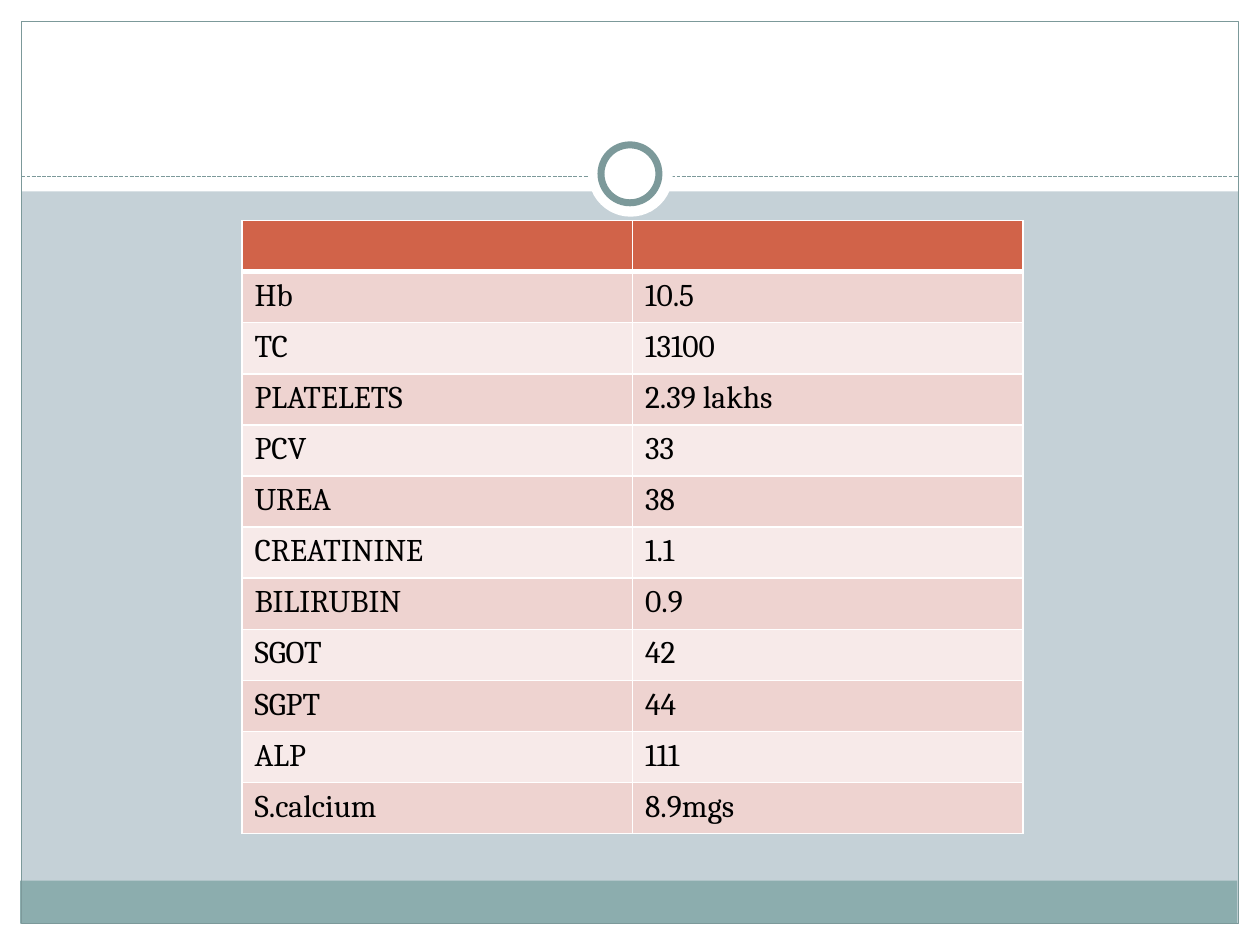
"""Build a slide that tabulates blood test results."""
from dataclasses import dataclass

from lxml.etree import SubElement
from pptx import Presentation
from pptx.dml.color import RGBColor
from pptx.enum.dml import MSO_LINE
from pptx.enum.shapes import MSO_CONNECTOR, MSO_SHAPE
from pptx.oxml.ns import qn
from pptx.util import Inches, Pt


@dataclass(frozen=True)
class Theme:
    """Colours, type and line widths of the slide."""
    background: str = "C5D1D7"
    white: str = "FFFFFF"
    footer: str = "8CADAE"
    outline: str = "7C999A"
    header: str = "D16349"
    bands: tuple = ("EED3D0", "F7EAE9")
    text: str = "000000"
    font: str = "Cambria"
    text_size: float = 18
    thin: float = 0.75
    ring: float = 4
    grid: float = 1
    header_rule: float = 3


THEME = Theme()
RESULTS = [
    ("Hb", "10.5"),
    ("TC", "13100"),
    ("PLATELETS", "2.39 lakhs"),
    ("PCV", "33"),
    ("UREA", "38"),
    ("CREATININE", "1.1"),
    ("BILIRUBIN", "0.9"),
    ("SGOT", "42"),
    ("SGPT", "44"),
    ("ALP", "111"),
    ("S.calcium", "8.9mgs"),
]


def rgb(value):
    """Return a colour from its hex value."""
    return RGBColor.from_string(value)


def add_panel(slide, box, fill=None, line_width=None, kind=MSO_SHAPE.RECTANGLE):
    """Add a flat shape with an optional fill and outline."""
    panel = slide.shapes.add_shape(kind, *map(Inches, box))
    panel.shadow.inherit = False
    if fill:
        panel.fill.solid()
        panel.fill.fore_color.rgb = rgb(fill)
    else:
        panel.fill.background()
    if line_width:
        panel.line.color.rgb = rgb(THEME.outline)
        panel.line.width = Pt(line_width)
    else:
        panel.line.fill.background()


def add_dashed_rule(slide, left, right, y):
    """Add the horizontal dashed rule of the title area."""
    rule = slide.shapes.add_connector(
        MSO_CONNECTOR.STRAIGHT, Inches(left), Inches(y), Inches(right), Inches(y))
    rule.line.color.rgb = rgb(THEME.outline)
    rule.line.width = Pt(THEME.thin)
    rule.line.dash_style = MSO_LINE.SQUARE_DOT
    SubElement(rule._element.spPr, qn("a:effectLst"))


def add_frame(slide):
    """Add the white margins, footer band, outline and title ring."""
    for box in [(0, 7.33, 10, 0.17), (0, 0, 10, 1.52),
                (0, 0, 0.17, 7.5), (9.83, 0, 0.17, 7.5)]:
        add_panel(slide, box, THEME.white)
    add_panel(slide, (0.16, 6.99, 9.66, 0.34), THEME.footer)
    add_panel(slide, (0.17, 0.17, 9.66, 7.16), line_width=THEME.thin)
    add_dashed_rule(slide, 0.17, 9.83, 1.4)
    add_panel(slide, (4.67, 1.05, 0.67, 0.67), THEME.white, kind=MSO_SHAPE.OVAL)
    add_panel(slide, (4.77, 1.15, 0.46, 0.46), THEME.white, THEME.ring, MSO_SHAPE.OVAL)


def set_borders(cell, top, bottom):
    """Draw white cell borders with the given top and bottom widths."""
    widths = {"a:lnL": THEME.grid, "a:lnR": THEME.grid, "a:lnT": top, "a:lnB": bottom}
    properties = cell._tc.get_or_add_tcPr()
    for tag, width in widths.items():
        border = SubElement(properties, qn(tag), w=str(Pt(width)))
        fill = SubElement(border, qn("a:solidFill"))
        SubElement(fill, qn("a:srgbClr"), val=THEME.white)


def format_cell(cell, fill, top=THEME.grid, bottom=THEME.grid):
    """Set the borders and fill of a cell."""
    set_borders(cell, top, bottom)
    cell.fill.solid()
    cell.fill.fore_color.rgb = rgb(fill)


def write_cell(cell, text):
    """Write a result into a cell."""
    run = cell.text_frame.paragraphs[0].add_run()
    run.text = text
    run.font.name = THEME.font
    run.font.size = Pt(THEME.text_size)
    run.font.color.rgb = rgb(THEME.text)


def add_results_table(slide):
    """Add the banded table below its empty header row."""
    box = (1.92, 1.75, 6.2, 4.87)
    table = slide.shapes.add_table(len(RESULTS) + 1, 2, *map(Inches, box)).table
    for header in table.rows[0].cells:
        format_cell(header, THEME.header, bottom=THEME.header_rule)
    for index, result in enumerate(RESULTS):
        top = THEME.grid if index else THEME.header_rule
        for cell, text in zip(table.rows[index + 1].cells, result):
            format_cell(cell, THEME.bands[index % 2], top=top)
            write_cell(cell, text)


def main():
    """Build and save the slide."""
    presentation = Presentation()
    presentation.slide_width, presentation.slide_height = Inches(10), Inches(7.5)
    slide = presentation.slides.add_slide(presentation.slide_layouts[6])
    slide.background.fill.solid()
    slide.background.fill.fore_color.rgb = rgb(THEME.background)
    add_frame(slide)
    add_results_table(slide)
    presentation.save("out.pptx")


if __name__ == "__main__":
    main()
